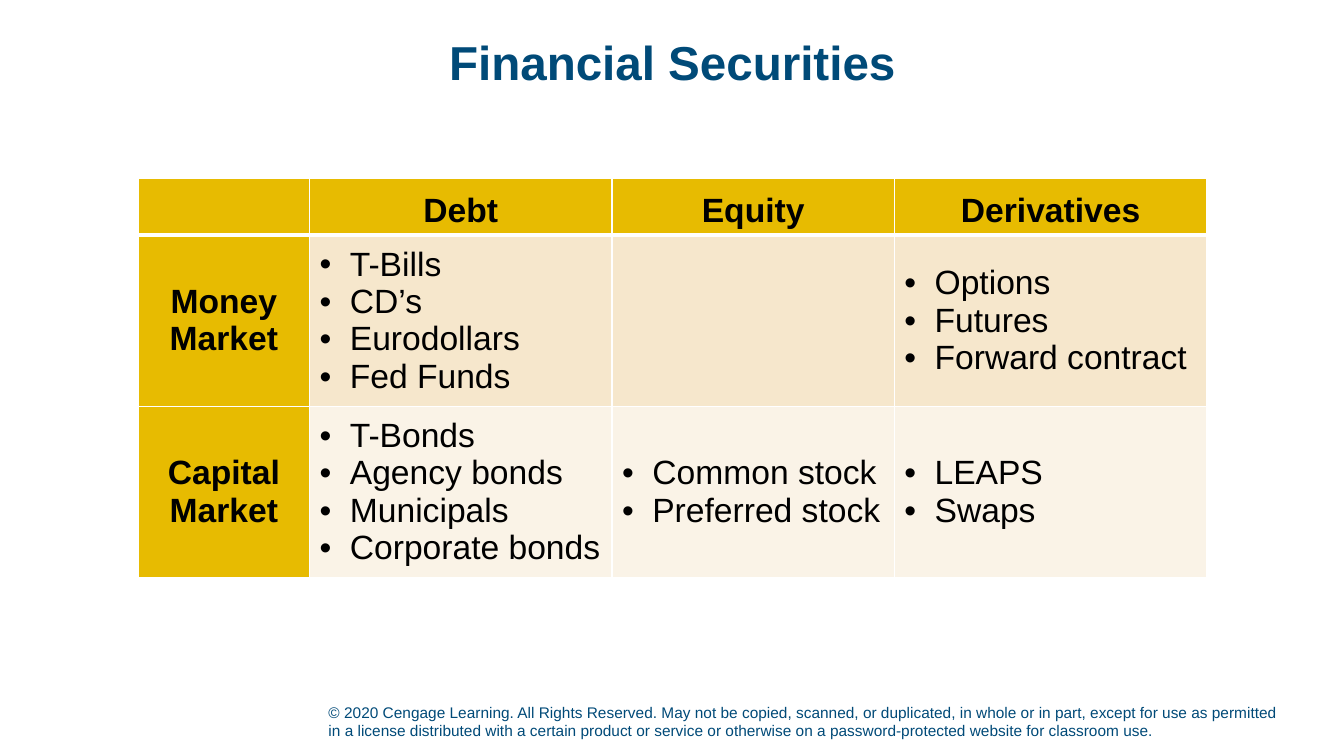
from lxml import etree
from pptx import Presentation
from pptx.dml.color import RGBColor
from pptx.enum.text import MSO_ANCHOR as ANCHOR, PP_ALIGN as ALIGN
from pptx.oxml.ns import qn
from pptx.util import Pt

PX = 9144  # 100 px to the inch
NAVY, BLACK, WHITE = "004A78", "000000", "FFFFFF"
GOLD, SAND, CREAM = "E7BB01", "F6E7CC", "FAF3E7"

COLUMN_WIDTHS = [170, 300, 280, 310]
ROW_HEIGHTS = [56, 168, 170]
BODY_FILLS = [None, SAND, CREAM]
SECURITIES = [
    [[], ["Debt"], ["Equity"], ["Derivatives"]],
    [["Money", "Market"],
     ["T-Bills", "CD’s", "Eurodollars", "Fed Funds"],
     [],
     ["Options", "Futures", "Forward contract"]],
    [["Capital", "Market"],
     ["T-Bonds", "Agency bonds", "Municipals", "Corporate bonds"],
     ["Common stock", "Preferred stock"],
     ["LEAPS", "Swaps"]],
]
COPYRIGHT = (
    "© 2020 Cengage Learning. All Rights Reserved. May not be copied, scanned, "
    "or duplicated, in whole or in part, except for use as permitted in a license "
    "distributed with a certain product or service or otherwise on a "
    "password-protected website for classroom use."
)


def px(*lengths):
    return [round(n * PX) for n in lengths]


def rgb(color):
    return RGBColor.from_string(color)


def add_run(p, text, size, color, bold=False):
    r = p.add_run()
    r.text = text
    r.font.name = "Arial"
    r.font.size = Pt(size)
    r.font.bold = bold
    r.font.color.rgb = rgb(color)


def add_bullet(p):
    pPr = p._p.get_or_add_pPr()
    indent, = px(30)
    pPr.set("marL", str(indent))
    pPr.set("indent", str(-indent))
    etree.SubElement(pPr, qn("a:buFont"), typeface="Arial")
    etree.SubElement(pPr, qn("a:buChar"), char="•")


def set_borders(cell, **widths):
    """Draw white borders; widths in points are keyed L, R, T, B."""
    tcPr = cell._tc.get_or_add_tcPr()
    for side, width in widths.items():
        ln = etree.SubElement(tcPr, qn(f"a:ln{side}"), w=str(Pt(width)))
        fill = etree.SubElement(ln, qn("a:solidFill"))
        etree.SubElement(fill, qn("a:srgbClr"), val=WHITE)


def set_title(s, box, text):
    title = s.shapes.title
    title.left, title.top, title.width, title.height = px(*box)
    tf = title.text_frame
    tf.word_wrap = True
    tf.vertical_anchor = ANCHOR.MIDDLE
    p = tf.paragraphs[0]
    p.alignment = ALIGN.CENTER
    p.line_spacing = 0.9
    add_run(p, text, 34, NAVY, bold=True)


def fill_cell(cell, lines, row, col):
    is_header = row == 0 or col == 0
    set_borders(cell, L=1, R=1, T=3 if row == 1 else 1, B=3 if row == 0 else 1)
    cell.fill.solid()
    cell.fill.fore_color.rgb = rgb(GOLD if is_header else BODY_FILLS[row])
    cell.vertical_anchor = ANCHOR.BOTTOM if row == 0 else ANCHOR.MIDDLE
    tf = cell.text_frame
    for i, line in enumerate(lines):
        p = tf.add_paragraph() if i else tf.paragraphs[0]
        if is_header:
            p.alignment = ALIGN.CENTER
        else:
            add_bullet(p)
        add_run(p, line, 24, BLACK, bold=is_header)


def add_securities_table(s, left, top):
    size = sum(COLUMN_WIDTHS), sum(ROW_HEIGHTS)
    frame = s.shapes.add_table(len(ROW_HEIGHTS), len(COLUMN_WIDTHS),
                               *px(left, top, *size))
    table = frame.table
    table.horz_banding = False
    for column, width in zip(table.columns, px(*COLUMN_WIDTHS)):
        column.width = width
    for row, height in zip(table.rows, px(*ROW_HEIGHTS)):
        row.height = height
    for i, cells in enumerate(SECURITIES):
        for j, lines in enumerate(cells):
            fill_cell(table.cell(i, j), lines, i, j)


def add_copyright(s, box):
    tf = s.shapes.add_textbox(*px(*box)).text_frame
    tf.word_wrap = True
    tf.vertical_anchor = ANCHOR.BOTTOM
    add_run(tf.paragraphs[0], COPYRIGHT, 11, NAVY)


def main():
    prs = Presentation()
    prs.slide_width, prs.slide_height = px(1333, 750)
    s = prs.slides.add_slide(prs.slide_layouts[5])
    add_copyright(s, (316, 689, 963, 50))
    set_title(s, (92, 15, 1150, 100), "Financial Securities")
    add_securities_table(s, 137, 177)
    prs.save("out.pptx")


if __name__ == "__main__":
    main()
